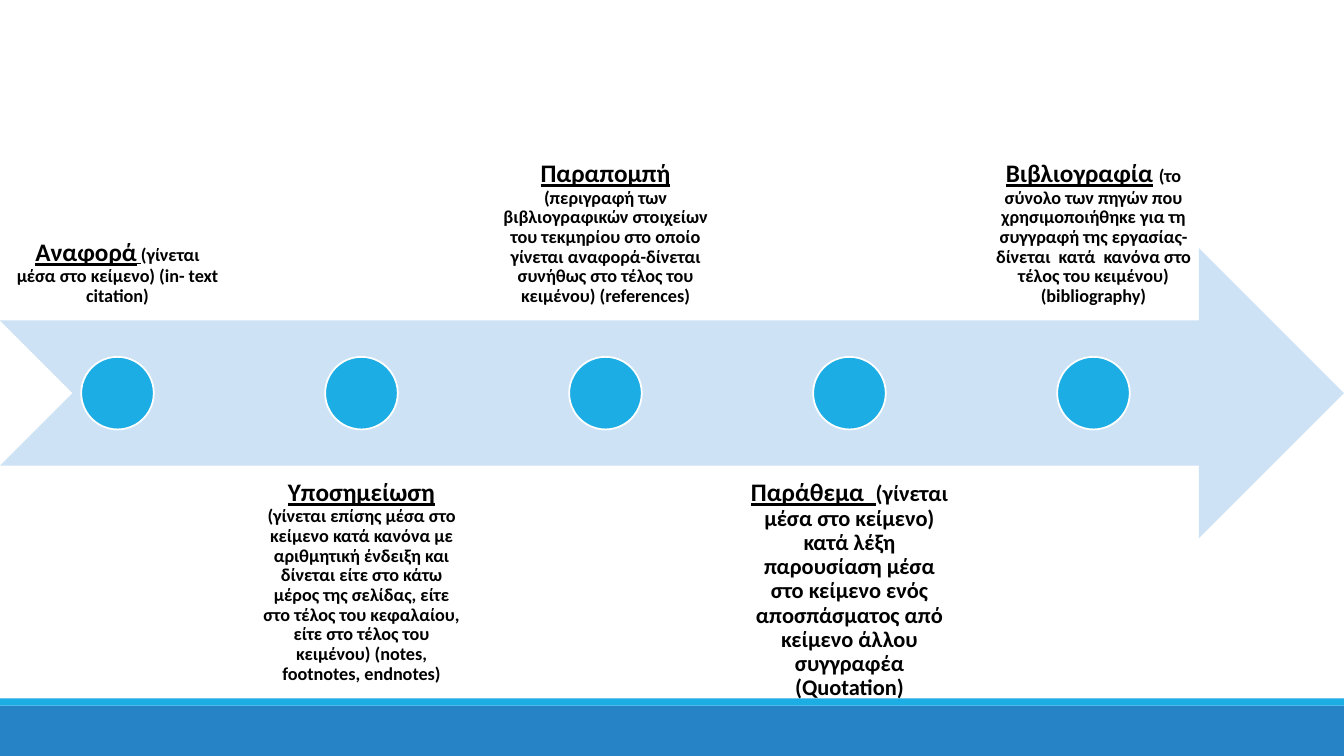
from pptx import Presentation
from pptx.dml.color import RGBColor
from pptx.enum.shapes import MSO_SHAPE
from pptx.enum.text import MSO_ANCHOR, PP_ALIGN
from pptx.util import Inches, Pt

RECT, OVAL = MSO_SHAPE.RECTANGLE, MSO_SHAPE.OVAL
ARROW = MSO_SHAPE.NOTCHED_RIGHT_ARROW
TOP, BOTTOM = MSO_ANCHOR.TOP, MSO_ANCHOR.BOTTOM
CENTER = PP_ALIGN.CENTER

BLUE = RGBColor(0x26, 0x83, 0xC6)
CYAN = RGBColor(0x1C, 0xAD, 0xE4)
PALE = RGBColor(0xCD, 0xE3, 0xF5)
WHITE = RGBColor(0xFF, 0xFF, 0xFF)
BLACK = RGBColor(0, 0, 0)

WIDTH, HEIGHT = 13.33, 7.5
FONT = "Calibri"
TERM, NOTE, LARGE = 18, 13, 16

# Each step is a list of runs: text, size, underlined
STEPS = [
    [("Αναφορά", TERM, True), (" ", NOTE, True),
     ("(γίνεται μέσα στο κείμενο) (in- text citation)", NOTE, False)],
    [("Υποσημείωση", TERM, True), (" ", NOTE, True),
     ("(γίνεται επίσης μέσα στο κείμενο κατά κανόνα με αριθμητική ένδειξη "
      "και δίνεται είτε στο κάτω μέρος της σελίδας, είτε στο τέλος του "
      "κεφαλαίου, είτε στο τέλος του κειμένου) "
      "(notes, footnotes, endnotes)", NOTE, False)],
    [("Παραπομπή ", TERM, True),
     ("(περιγραφή των βιβλιογραφικών στοιχείων του τεκμηρίου στο οποίο "
      "γίνεται αναφορά-δίνεται συνήθως στο τέλος του κειμένου) "
      "(references)", NOTE, False)],
    [("Παράθεμα  ", TERM, True),
     ("(γίνεται μέσα στο κείμενο) κατά λέξη παρουσίαση μέσα στο κείμενο "
      "ενός αποσπάσματος από κείμενο άλλου συγγραφέα (Quotation)",
      LARGE, False)],
    [("Βιβλιογραφία", TERM, True), (" ", TERM, False),
     ("(το σύνολο των πηγών που χρησιμοποιήθηκε για τη συγγραφή της "
      "εργασίας- δίνεται  κατά  κανόνα στο τέλος του κειμένου) "
      "(bibliography)", NOTE, False)],
]


def add_form(slide, kind, box, fill, line=None):
    form = slide.shapes.add_shape(kind, *map(Inches, box))
    form.shadow.inherit = False
    form.fill.solid()
    form.fill.fore_color.rgb = fill
    if line is None:
        form.line.fill.background()
    else:
        form.line.color.rgb = line
        form.line.width = Pt(1.25)


def add_label(slide, box, runs, anchor):
    frame = slide.shapes.add_textbox(*map(Inches, box)).text_frame
    frame.word_wrap = True
    frame.vertical_anchor = anchor
    frame.margin_left = frame.margin_right = Inches(0.14)
    frame.margin_top = frame.margin_bottom = Inches(0.14)
    para = frame.paragraphs[0]
    para.alignment = CENTER
    para.line_spacing = 0.9
    for text, size, under in runs:
        run = para.add_run()
        run.text = text
        font = run.font
        font.name, font.size = FONT, Pt(size)
        font.bold, font.underline = True, under
        font.color.rgb = BLACK


def add_footer(slide, box):
    left, top, width, height = box
    strip = 0.07
    add_form(slide, RECT, (left, top + strip, width, height - strip), BLUE)
    add_form(slide, RECT, (left, top, width, strip), CYAN)


def add_process(slide, box):
    left, top, width, height = box
    add_form(slide, ARROW, box, PALE)

    # Five columns fill the first nine tenths of the arrow
    label = 2.31
    pitch = 2.42
    dot = height / 4
    middle = top + height / 2
    reach = height * 0.75
    for i, runs in enumerate(STEPS):
        x = left + 0.01 + i * pitch
        above = i % 2 == 0
        y = middle - reach - height / 4 * 0 - dot if above else middle + dot
        y = top + height / 4 - height if above else y
        anchor = BOTTOM if above else TOP
        add_label(slide, (x, y, label, height), runs, anchor)
        spot = (x + (label - dot) / 2, middle - dot / 2, dot, dot)
        add_form(slide, OVAL, spot, CYAN, WHITE)


def main():
    deck = Presentation()
    deck.slide_width, deck.slide_height = Inches(WIDTH), Inches(HEIGHT)
    slide = deck.slides.add_slide(deck.slide_layouts[6])
    add_footer(slide, (0, 6.93, WIDTH, 0.57))
    add_process(slide, (0, 2.46, WIDTH, 2.88))
    deck.save("out.pptx")


if __name__ == "__main__":
    main()
